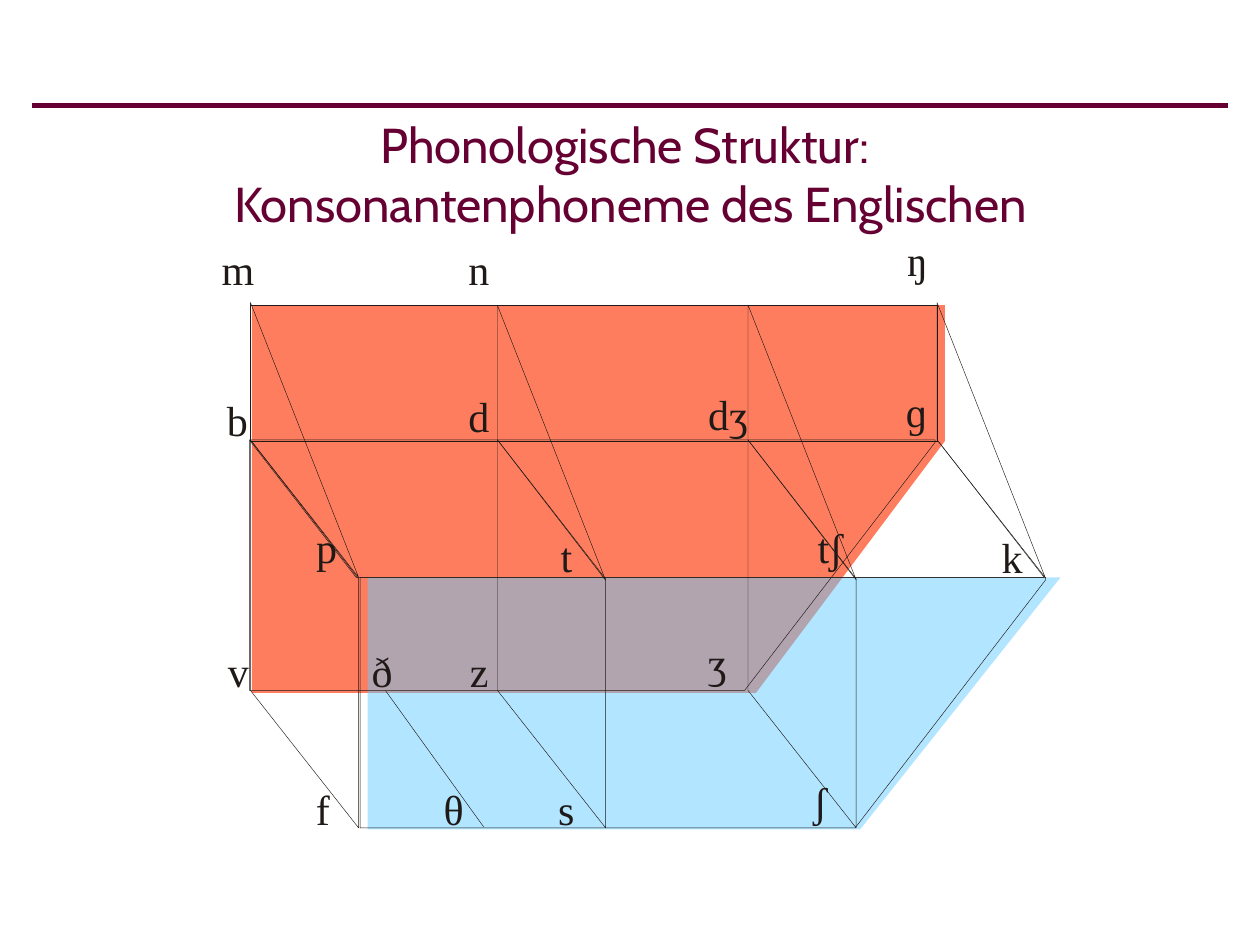
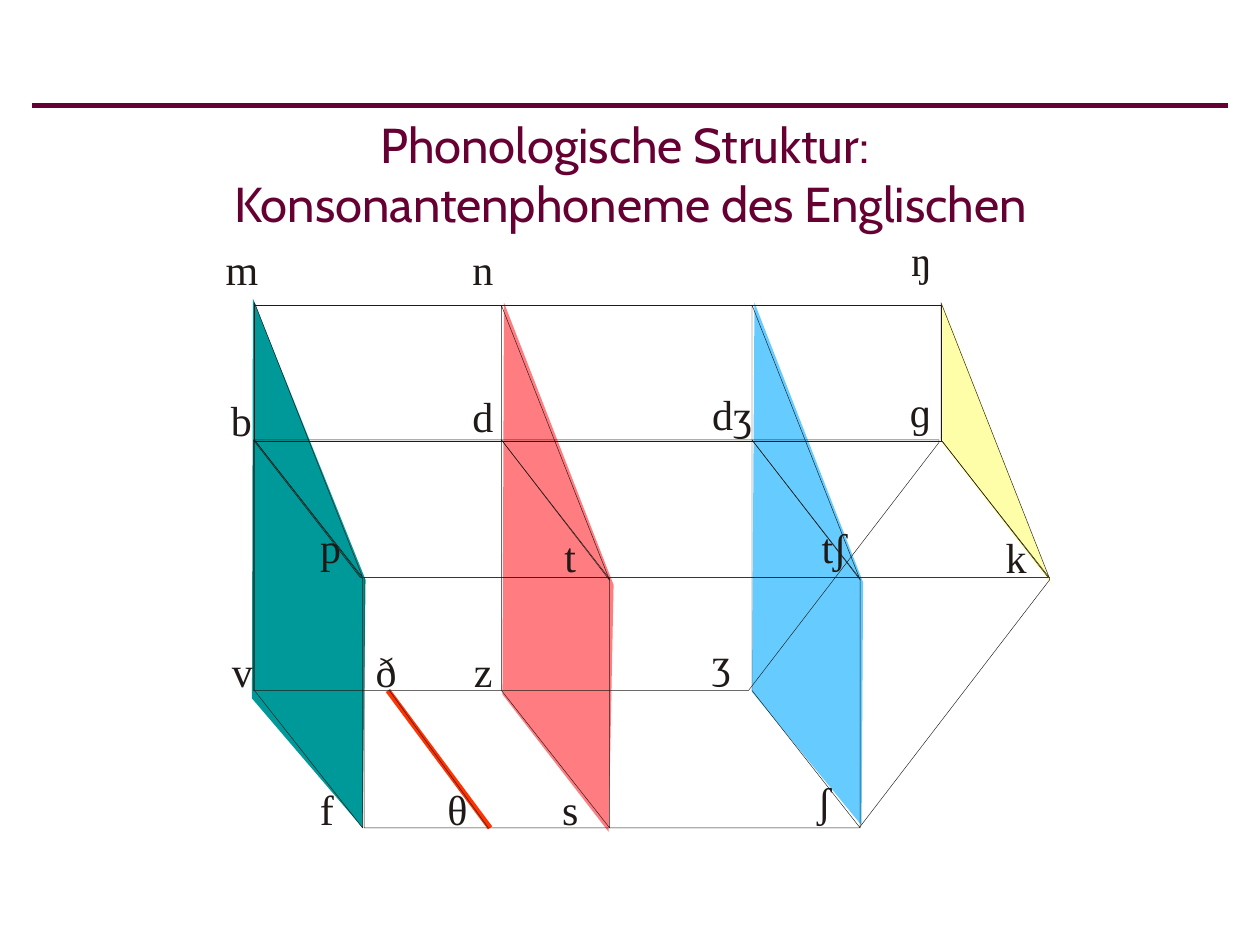
from lxml.etree import SubElement
from pptx import Presentation
from pptx.dml.color import RGBColor
from pptx.enum.shapes import MSO_CONNECTOR, MSO_SHAPE
from pptx.enum.text import MSO_ANCHOR, MSO_AUTO_SIZE, PP_ALIGN
from pptx.oxml.ns import qn
from pptx.util import Cm, Pt

PLUM = RGBColor(0x66, 0x00, 0x33)
INK = RGBColor(0x1F, 0x1A, 0x17)
CORAL = RGBColor(0xFF, 0x7D, 0x5F)
SKY = RGBColor(0x66, 0xCC, 0xFF)
TEAL = RGBColor(0x00, 0x99, 0x99)
ROSE = RGBColor(0xFF, 0x7C, 0x80)
CREAM = RGBColor(0xFF, 0xFE, 0xA8)
RED = RGBColor(0xFF, 0x33, 0x00)

HEAD = {"name": "Cabin", "size": Pt(28)}
SIGN = {"name": "Times New Roman", "size": Pt(24)}
BARE = {"margin_left": 0, "margin_right": 0, "margin_top": 0,
        "margin_bottom": 0, "word_wrap": False,
        "auto_size": MSO_AUTO_SIZE.SHAPE_TO_FIT_TEXT}
TITLE = ("Phonologische Struktur: ", "Konsonantenphoneme des Englischen")
HAIR = 0.25
BOLD = 3

COLUMNS = ((0, 0), (4.98, 0.06), (10.03, 0.05), (13.84, 0))
DEPTH = 2.18
STOP, FRONT, BACK, BASE = 2.77, 5.54, 7.82, 10.59
PHONES = (
    ("m", -0.58, -1.19, 0.66), ("n", 4.39, -1.19, 0.43),
    ("ŋ", 13.23, -1.37, 0.43),
    ("b", -0.48, 1.85, 0.43), ("d", 4.39, 1.78, 0.43),
    ("dʒ", 9.22, 1.73, 0.81), ("ɡ", 13.21, 1.68, 0.43),
    ("p", 1.32, 4.42, 0.43), ("t", 6.25, 4.6, 0.23),
    ("tʃ", 11.34, 4.42, 0.7), ("k", 15.14, 4.62, 0.43),
    ("v", -0.46, 6.91, 0.43), ("ð", 2.44, 6.91, 0.43),
    ("z", 4.42, 6.91, 0.38), ("ʒ", 9.22, 6.73, 0.38),
    ("f", 1.32, 9.7, 0.28), ("θ", 3.89, 9.7, 0.41),
    ("s", 6.2, 9.7, 0.33), ("ʃ", 11.35, 9.53, 0.28),
)

VOICED = ((0.03, 0.05), (0.03, 7.87), (10.19, 7.87), (14, 2.79), (14, 0.05))
MUTE = ((2.36, 5.54), (2.36, 10.62), (12.29, 10.62), (16.33, 5.54))
PLACES = (
    (TEAL, ((-0.03, -0.08), (-0.05, 7.98), (2.18, 10.59), (2.24, 5.59))),
    (ROSE, ((5.03, 0), (5, 7.9), (7.14, 10.67), (7.24, 5.69))),
    (SKY, ((10.08, 0), (10.03, 7.85), (12.24, 10.54), (12.27, 5.64))),
    (CREAM, ((13.87, 0.03), (13.87, 2.84), (16.08, 5.69))),
)


def style(item, values):
    """Set each named value on the item."""
    for name, value in values.items():
        setattr(item, name, value)


def ink(shape, color=INK, width=HAIR):
    """Give the shape a plain line."""
    shape.line.color.rgb = color
    shape.line.width = Pt(width)


def line(slide, box, start, end, color=INK, width=HAIR):
    """Draw a straight line between two points of the box."""
    ends = [Cm(base + step) for point in (start, end)
            for base, step in zip(box, point)]
    rule = slide.shapes.add_connector(MSO_CONNECTOR.STRAIGHT, *ends)
    ink(rule, color, width)
    SubElement(rule._element.spPr, qn("a:effectLst"))


def area(slide, box, points, color=None, alpha=None):
    """Draw a closed outline, filled if a colour is given."""
    spots = [(Cm(box[0] + x), Cm(box[1] + y)) for x, y in points]
    pen = slide.shapes.build_freeform(*spots[0])
    pen.add_line_segments(spots[1:], close=True)
    shape = pen.convert_to_shape()
    shape.shadow.inherit = False
    if color is None:
        shape.fill.background()
        ink(shape)
        return
    shape.fill.solid()
    shape.fill.fore_color.rgb = color
    shape.line.fill.background()
    if alpha:
        tint = next(shape._element.spPr.iter(qn("a:srgbClr")))
        SubElement(tint, qn("a:alpha"), val=str(alpha * 1000))


def text(slide, place, lines, font, color):
    """Write centred lines in a text box and return its frame."""
    frame = slide.shapes.add_textbox(*map(Cm, place)).text_frame
    para = frame.paragraphs[0]
    para.alignment = PP_ALIGN.CENTER
    for index, words in enumerate(lines):
        if index:
            para.add_line_break()
        run = para.add_run()
        run.text = words
        style(run.font, font)
        run.font.color.rgb = color
    return frame


def head(slide, box):
    """Draw the rule and the title below it."""
    line(slide, box, (-0.04, 0), (24.07, 0), PLUM, BOLD)
    frame = text(slide, (*box, 24.03, 2.74), TITLE, HEAD, PLUM)
    style(frame, {"word_wrap": True, "vertical_anchor": MSO_ANCHOR.MIDDLE})


def prism(slide, box):
    """Draw the wire frame of the consonants with its signs."""
    left, top = box
    plane = ((0, 0), (13.82, 0), (13.82, 0.05), (9.98, 5.05), (0, 5.05))
    for x, y in ((-0.02, STOP), (2.21, FRONT)):
        area(slide, (left + x, top + y), plane)
    for x, _ in COLUMNS[:3]:
        area(slide, box, ((x, STOP), (x + DEPTH, FRONT + 0.03),
                          (x + DEPTH, BASE), (x, BACK)))
    area(slide, box, ((0, 2.8), (13.87, 2.8), (16, FRONT), (2.13, FRONT)))
    roof = slide.shapes.add_shape(MSO_SHAPE.RECTANGLE, Cm(left),
                                  Cm(top + 0.05), Cm(13.84), Cm(2.74))
    roof.shadow.inherit = False
    roof.fill.background()
    ink(roof)
    for x, drop in COLUMNS:
        area(slide, box, ((x, drop), (x, STOP), (x + DEPTH, FRONT + drop)))
    line(slide, box, (2.72, BACK), (4.7, 10.57))
    for sign, x, y, width in PHONES:
        place = (left + x, top + y, width, 1.02)
        style(text(slide, place, [sign], SIGN, INK), BARE)


def voice(slide, box):
    """Shade the voiced and the voiceless plane."""
    area(slide, box, VOICED, CORAL)
    area(slide, box, MUTE, SKY, 50)
    prism(slide, box)


def place(slide, box):
    """Shade the planes that share a place of sound."""
    for color, points in PLACES:
        area(slide, box, points, color)
    line(slide, box, (2.69, BACK), (4.75, BASE), RED, BOLD)
    prism(slide, box)


def main():
    """Build both slides and save them."""
    deck = Presentation()
    style(deck, {"slide_width": Cm(25.4), "slide_height": Cm(19.05)})
    for draw, left in ((voice, 5.05), (place, 5.13)):
        slide = deck.slides.add_slide(deck.slide_layouts[6])
        head(slide, (0.69, 2.13))
        draw(slide, (left, 6.1))
    deck.save("out.pptx")


if __name__ == "__main__":
    main()
